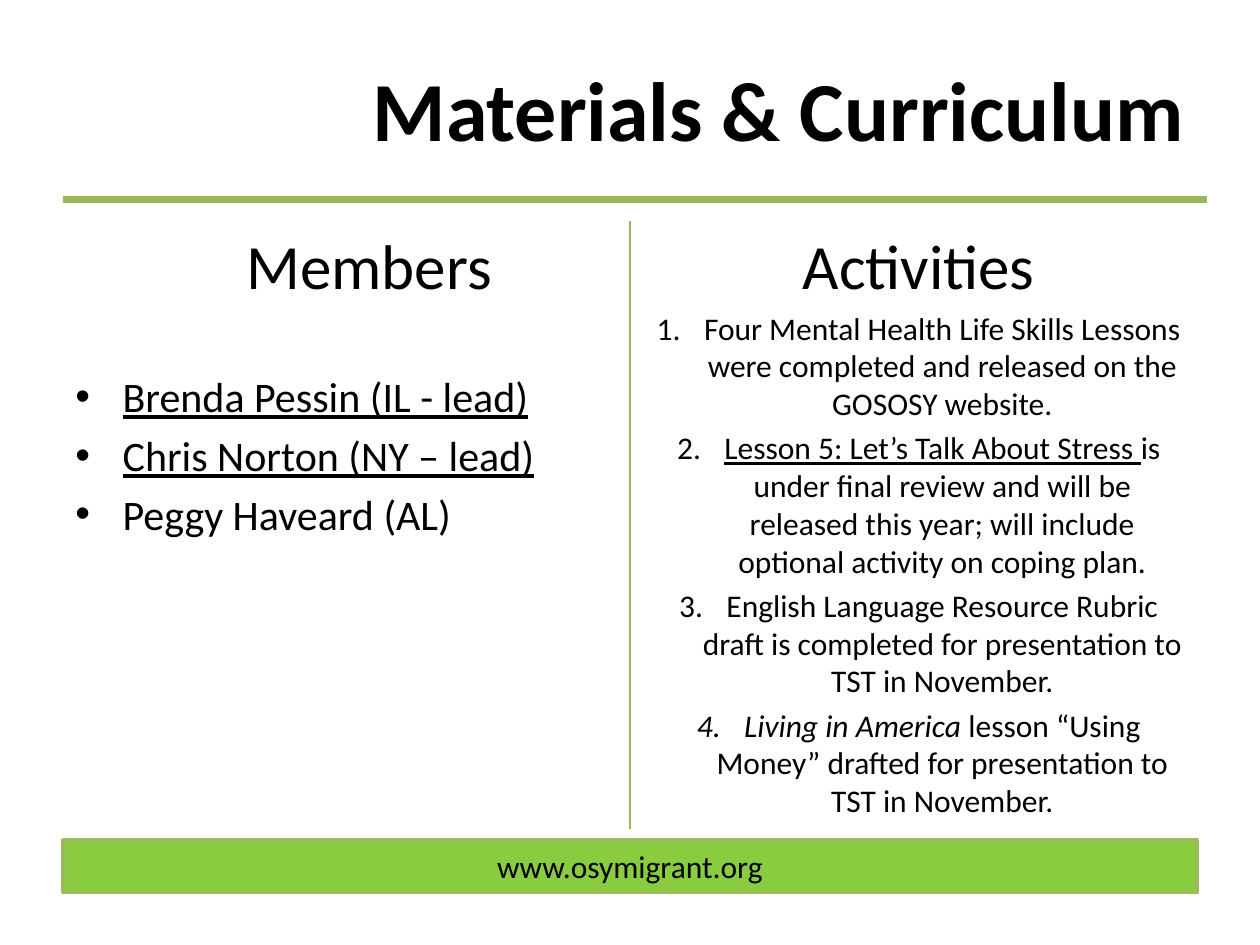
"""Build the Materials & Curriculum slide with members and activities."""
from lxml import etree
from pptx import Presentation
from pptx.dml.color import RGBColor
from pptx.enum.shapes import MSO_CONNECTOR, MSO_SHAPE
from pptx.enum.text import MSO_ANCHOR, PP_ALIGN
from pptx.oxml.ns import qn
from pptx.util import Pt

LEFT, CENTER, RIGHT = PP_ALIGN.LEFT, PP_ALIGN.CENTER, PP_ALIGN.RIGHT
MIDDLE = MSO_ANCHOR.MIDDLE
STRAIGHT = MSO_CONNECTOR.STRAIGHT
RECT = MSO_SHAPE.RECTANGLE


def color(code):
    return RGBColor.from_string(code)


def style(par, size, align, bold=False):
    par.alignment = align
    for run in par.runs:
        run.font.name = "Calibri"
        run.font.size = Pt(size)
        run.font.bold = bold
        run.font.color.rgb = color("000000")


deck = Presentation()
deck.slide_width, deck.slide_height = Pt(720), Pt(540)
slide = deck.slides.add_slide(deck.slide_layouts[6])
shapes = slide.shapes

title = shapes.add_textbox(Pt(36), Pt(21.6), Pt(648), Pt(80.64)).text_frame
title.word_wrap = True
title.vertical_anchor = MIDDLE
title.text = "Materials & Curriculum"
style(title.paragraphs[0], 48, RIGHT, bold=True)

members = [
    [("Brenda Pessin (IL - lead)", "u")],
    [("Chris Norton (NY – lead)", "u")],
    [("Peggy Haveard (AL)", "")],
]
tasks = [
    [("Four Mental Health Life Skills Lessons were completed and released "
      "on the GOSOSY website.", "")],
    [("Lesson 5: Let’s Talk About Stress ", "u"),
     ("is under final review and will be released this year; will include "
      "optional activity on coping plan.", "")],
    [("English Language Resource Rubric draft is completed for presentation "
      "to TST in November.", "")],
    [("Living in America ", "i"),
     ("lesson “Using Money” drafted for presentation to TST in November.", "")],
]
columns = [
    (36, "Members", 32, members, 24, LEFT, 39, "buChar", {"char": "•"}),
    (366, "Activities", 0, tasks, 18, CENTER, 3.6, "buAutoNum",
     {"type": "arabicPeriod"}),
]
for left, head, shift, items, size, align, gap, tag, mark in columns:
    frame = shapes.add_textbox(Pt(left), Pt(126), Pt(318), Pt(348)).text_frame
    frame.word_wrap = True
    frame.text = head
    style(frame.paragraphs[0], 36, CENTER)
    frame.paragraphs[0]._p.get_or_add_pPr().set("marL", str(Pt(shift)))
    for index, item in enumerate(items):
        par = frame.add_paragraph()
        par.space_before = Pt(size * 0.2 if index else gap)
        props = par._p.get_or_add_pPr()
        props.set("marL", str(Pt(27)))
        props.set("indent", str(Pt(-27)))
        etree.SubElement(props, qn("a:buFont"), typeface="Arial" if tag == "buChar" else "+mj-lt")
        etree.SubElement(props, qn("a:" + tag), mark)
        for words, look in item:
            run = par.add_run()
            run.text = words
            run.font.underline = look == "u"
            run.font.italic = look == "i"
        style(par, size, align)

rules = [(36, 114, 690, 114, 4.5), (360, 126, 360, 474, 1.5)]
for left, top, right, bottom, width in rules:
    rule = shapes.add_connector(STRAIGHT, Pt(left), Pt(top), Pt(right), Pt(bottom))
    rule.line.color.rgb = color("98B955")
    rule.line.width = Pt(width)
    etree.SubElement(rule._element.spPr, qn("a:effectLst"))

footer = shapes.add_shape(RECT, Pt(36), Pt(480), Pt(648), Pt(30))
footer.shadow.inherit = False
footer.fill.solid()
footer.fill.fore_color.rgb = color("89CC40")
footer.line.color.rgb = color("9BBB59")
footer.line.width = Pt(2)
footer.text_frame.vertical_anchor = MIDDLE
footer.text_frame.text = "www.osymigrant.org"
style(footer.text_frame.paragraphs[0], 18, CENTER)

deck.save("out.pptx")
